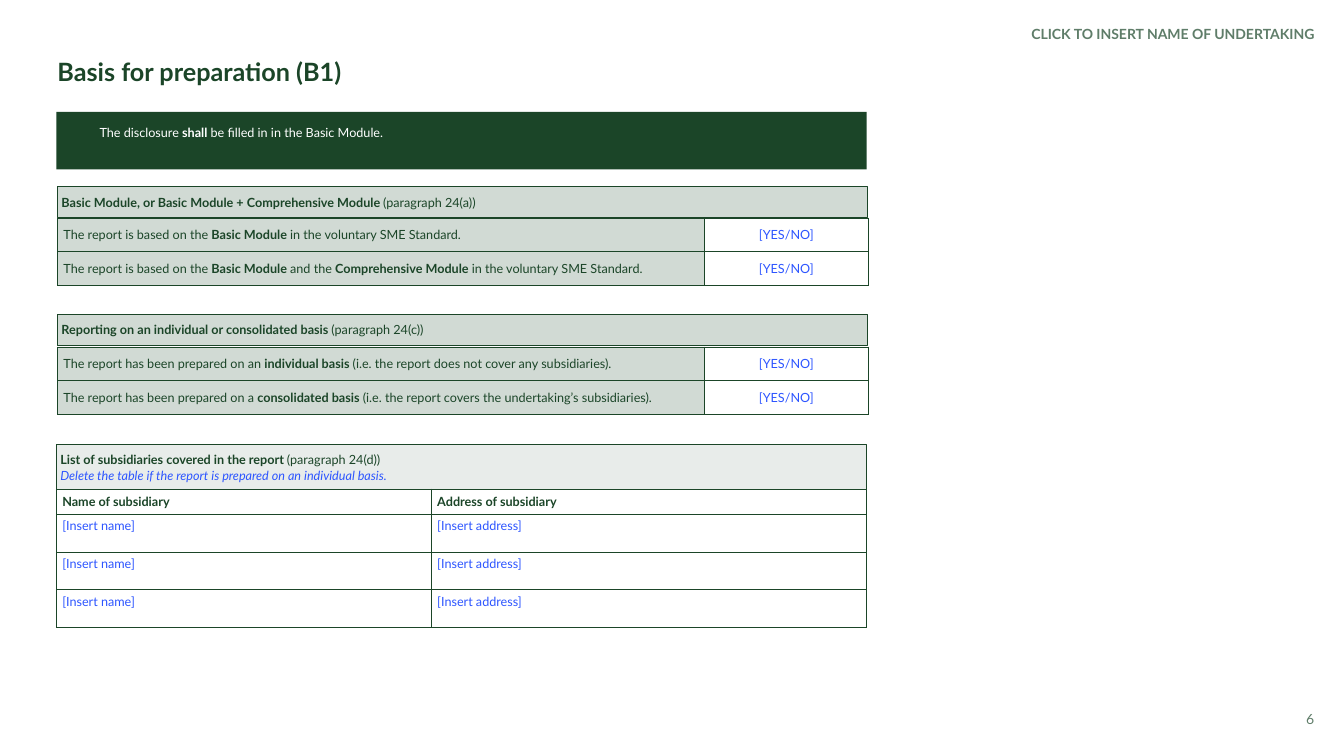
from lxml.etree import SubElement
from pptx import Presentation
from pptx.dml.color import RGBColor
from pptx.enum.shapes import MSO_SHAPE as SHAPE
from pptx.enum.text import MSO_ANCHOR as ANCHOR, PP_ALIGN as ALIGN
from pptx.oxml.ns import qn
from pptx.util import Cm, Pt

COLORS = {"green": "1B4528", "sage": "D1DAD4", "pale": "E8ECEA",
          "muted": "5F7D69", "blue": "2D55FF", "white": "FFFFFF"}
FONT = "Lato"

# Text between ** marks is bold.
HEADER = "**CLICK TO INSERT NAME OF UNDERTAKING**"
TITLE = "**Basis for preparation (B1)**"
BANNER = "The disclosure **shall** be filled in in the Basic Module."
PAGE = "6"
ANSWER = "[YES/NO]"
QUESTIONS = [  # top of heading, top of table, heading, statements
    (4.7, 5.49, "**Basic Module, or Basic Module + Comprehensive Module **(paragraph 24(a))", [
        "The report is based on the **Basic Module** in the voluntary SME Standard.",
        "The report is based on the **Basic Module** and the **Comprehensive Module**"
        " in the voluntary SME Standard."]),
    (7.92, 8.74, "**Reporting on an individual or consolidated basis** (paragraph 24(c))", [
        "The report has been prepared on an **individual basis**"
        " (i.e. the report does not cover any subsidiaries).",
        "The report has been prepared on a **consolidated basis**"
        " (i.e. the report covers the undertaking’s subsidiaries)."]),
]
LIST_HEADING = "**List of subsidiaries covered in the report **(paragraph 24(d))"
LIST_HINT = "Delete the table if the report is prepared on an individual basis."
LIST_COLUMNS = ["**Name of subsidiary**", "**Address of subsidiary**"]
LIST_ENTRY = ["[Insert name]", "[Insert address]"]
ENTRY_COUNT = 3

LEFT, LIST_LEFT, WIDTH = 1.45, 1.42, 20.42
QUESTION_COLS, QUESTION_ROW = [16.31, 4.11], 0.85
LIST_COLS, LIST_ROWS = [9.45, 10.97], [0.64] + [0.95] * ENTRY_COUNT


def rgb(name):
    return RGBColor.from_string(COLORS[name])


def set_insets(target, left, top, right, bottom):
    target.margin_left, target.margin_top = Cm(left), Cm(top)
    target.margin_right, target.margin_bottom = Cm(right), Cm(bottom)


def write(p, text, color="green", size=9, align=ALIGN.LEFT, italic=None):
    """Fill a paragraph, making the parts between ** marks bold."""
    p.alignment = align
    p.font.name, p.font.size, p.font.italic = FONT, Pt(size), italic
    p.font.color.rgb = rgb(color)
    for i, part in enumerate(text.split("**")):
        if part:
            r = p.add_run()
            r.text = part
            r.font.name, r.font.size, r.font.italic = FONT, Pt(size), italic
            r.font.bold = i % 2 == 1
            r.font.color.rgb = rgb(color)


def add_label(slide, box, text, **style):
    tf = slide.shapes.add_textbox(*map(Cm, box)).text_frame
    tf.word_wrap = True
    set_insets(tf, 0, 0, 0, 0)
    write(tf.paragraphs[0], text, **style)


def add_panel(slide, box, fill, insets, line_width=None):
    sp = slide.shapes.add_shape(SHAPE.RECTANGLE, *map(Cm, box))
    sp.shadow.inherit = False
    sp.fill.solid()
    sp.fill.fore_color.rgb = rgb(fill)
    if line_width:
        sp.line.color.rgb = rgb("green")
        sp.line.width = Pt(line_width)
    else:
        sp.line.fill.background()
    tf = sp.text_frame
    tf.word_wrap = True
    tf.vertical_anchor = ANCHOR.TOP
    set_insets(tf, *insets)
    return tf


def set_borders(cell):
    tc_pr = cell._tc.get_or_add_tcPr()
    for i, side in enumerate(("lnL", "lnR", "lnT", "lnB")):
        ln = SubElement(tc_pr, qn("a:" + side), w=str(Pt(0.5)))
        fill = SubElement(ln, qn("a:solidFill"))
        SubElement(fill, qn("a:srgbClr"), val=COLORS["green"])
        tc_pr.insert(i, ln)


def add_grid(slide, left, top, cols, rows, cells):
    """Add a table; each cell is (text, text colour, fill, alignment, anchor)."""
    table = slide.shapes.add_table(len(rows), len(cols), Cm(left), Cm(top),
                                   Cm(sum(cols)), Cm(sum(rows))).table
    table.first_row = table.horz_banding = False
    for column, width in zip(table.columns, cols):
        column.width = Cm(width)
    for row, height, row_cells in zip(table.rows, rows, cells):
        row.height = Cm(height)
        for cell, (text, color, fill, align, anchor) in zip(row.cells, row_cells):
            set_insets(cell, 0.15, 0.1, 0.15, 0.1)
            cell.vertical_anchor = anchor
            cell.fill.solid()
            cell.fill.fore_color.rgb = rgb(fill)
            set_borders(cell)
            write(cell.text_frame.paragraphs[0], text, color, align=align)


def main():
    prs = Presentation()
    prs.slide_width, prs.slide_height = Cm(33.87), Cm(19.05)
    slide = prs.slides.add_slide(prs.slide_layouts[6])
    heading_insets = (0.1, 0.2, 0.1, 0.2)

    add_label(slide, (23.01, 0.64, 10.11, 0.43), HEADER,
              color="muted", size=10, align=ALIGN.RIGHT)
    add_label(slide, (LEFT, 1.42, 31.01, 0.71), TITLE, size=18)
    add_label(slide, (25.5, 17.91, 7.62, 0.43), PAGE,
              color="muted", size=10, align=ALIGN.RIGHT)

    tf = add_panel(slide, (LIST_LEFT, 2.82, WIDTH, 1.45), "green", (1.09, 0.3, 0.3, 0.41))
    tf.paragraphs[0].line_spacing = 1.06
    write(tf.paragraphs[0], BANNER, "white")

    for heading_top, table_top, heading, statements in QUESTIONS:
        tf = add_panel(slide, (LEFT, heading_top, WIDTH, 0.79), "sage", heading_insets, 0.75)
        write(tf.paragraphs[0], heading)
        cells = [[(s, "green", "sage", ALIGN.LEFT, ANCHOR.MIDDLE),
                  (ANSWER, "blue", "white", ALIGN.CENTER, ANCHOR.MIDDLE)]
                 for s in statements]
        add_grid(slide, LEFT, table_top, QUESTION_COLS, [QUESTION_ROW] * len(cells), cells)

    tf = add_panel(slide, (LIST_LEFT, 11.2, WIDTH, 1.2), "pale", heading_insets, 0.5)
    write(tf.paragraphs[0], LIST_HEADING)
    write(tf.add_paragraph(), LIST_HINT, "blue", italic=True)
    names = [(t, "green", "white", ALIGN.LEFT, ANCHOR.MIDDLE) for t in LIST_COLUMNS]
    entry = [(t, "blue", "white", ALIGN.LEFT, ANCHOR.TOP) for t in LIST_ENTRY]
    add_grid(slide, LIST_LEFT, 12.32, LIST_COLS, LIST_ROWS, [names] + [entry] * ENTRY_COUNT)

    prs.save("out.pptx")


if __name__ == "__main__":
    main()
